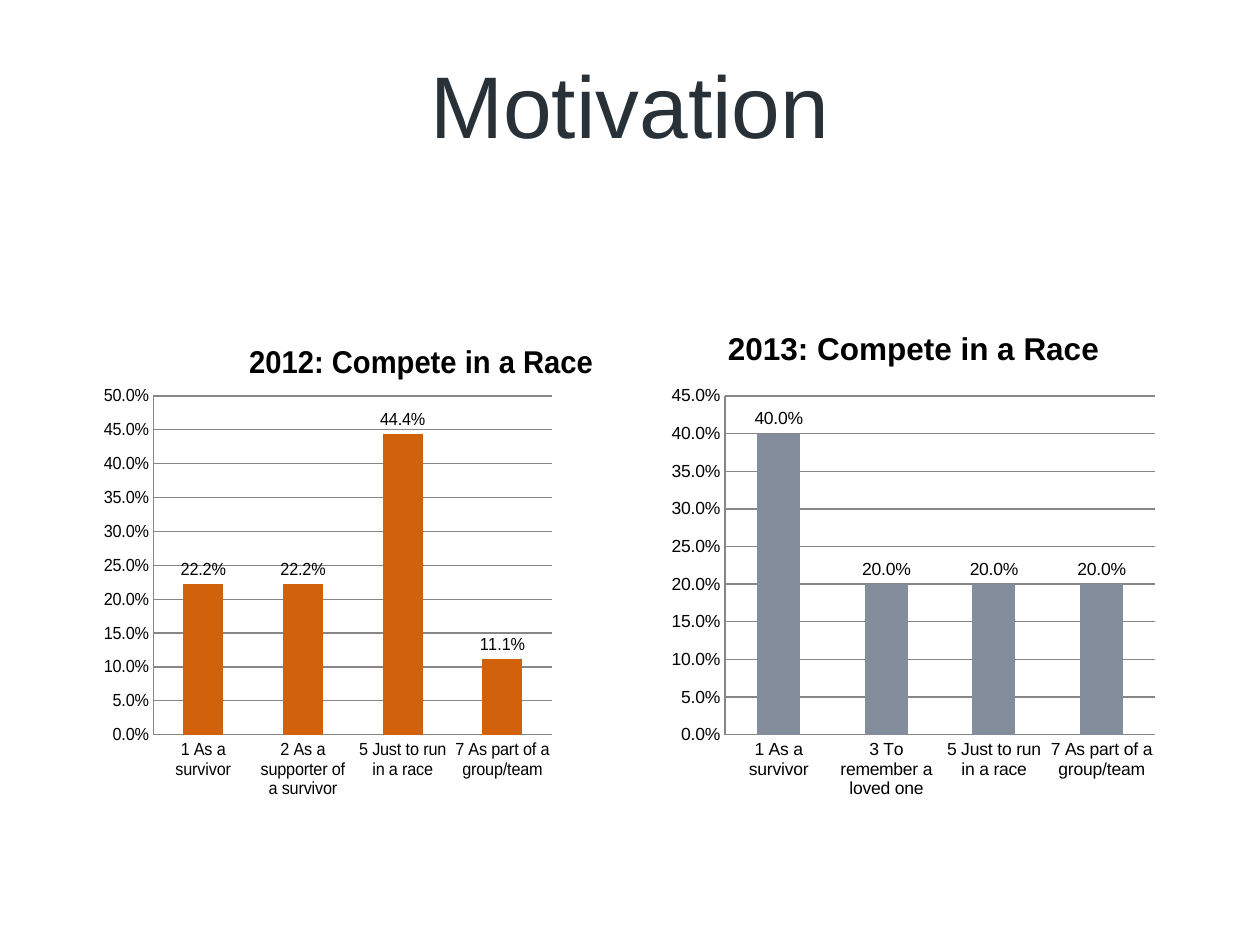
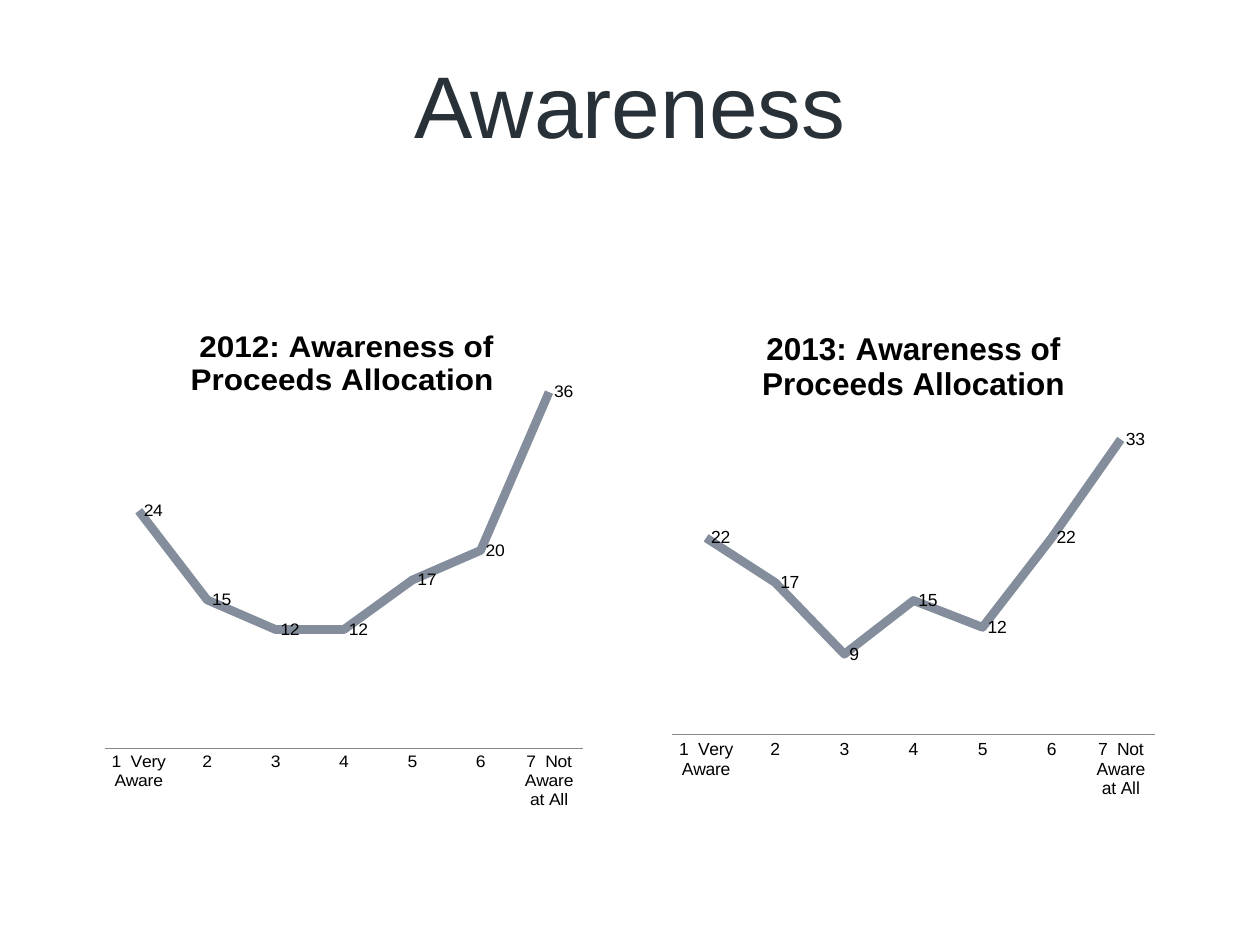
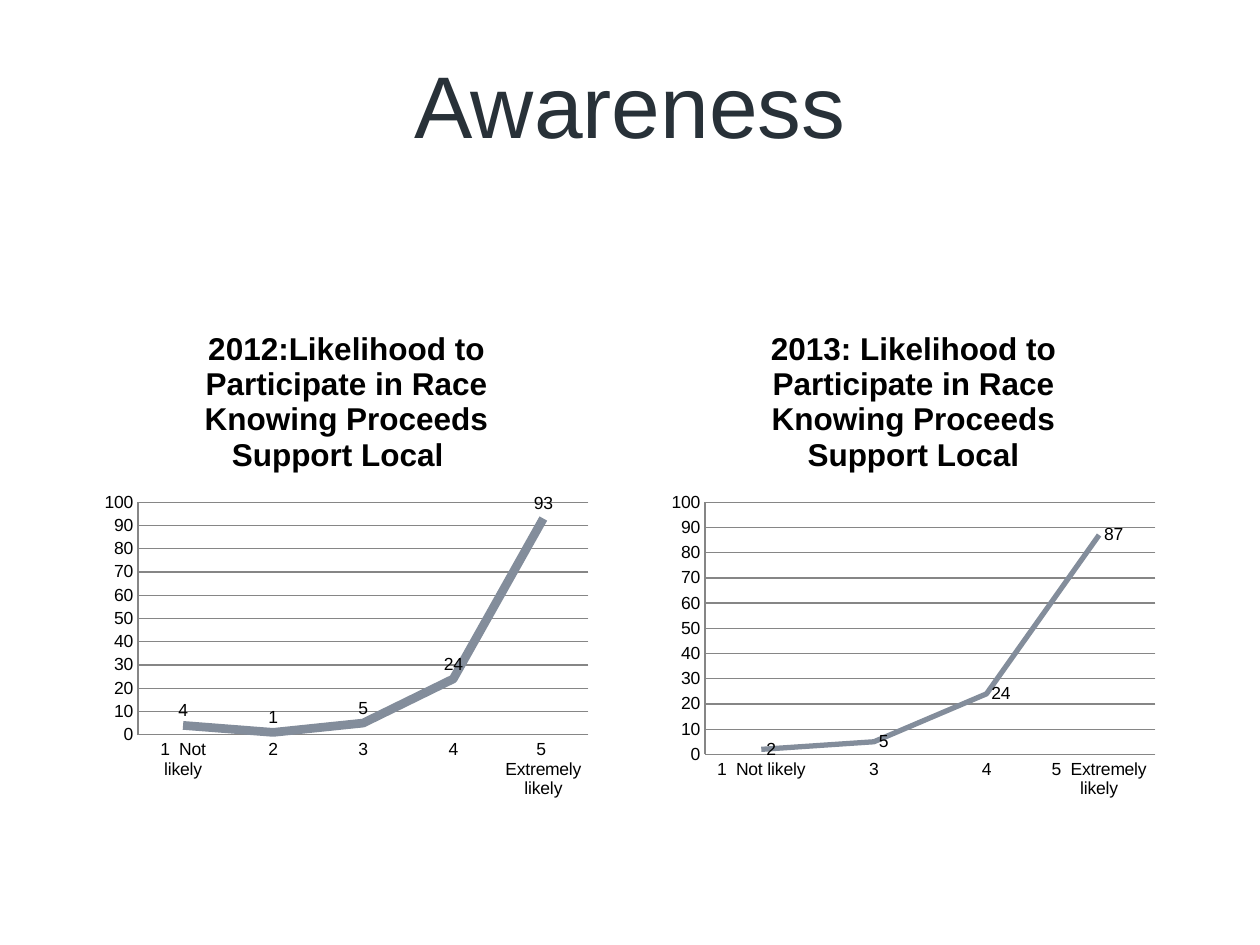
from lxml.etree import SubElement
from pptx import Presentation
from pptx.chart.data import CategoryChartData
from pptx.dml.color import RGBColor
from pptx.enum.chart import XL_CHART_TYPE, XL_LABEL_POSITION, XL_TICK_MARK
from pptx.enum.text import MSO_ANCHOR, PP_ALIGN
from pptx.oxml.ns import qn
from pptx.util import Inches, Pt

COLORS = {"title": "283138", "text": "000000", "grid": "868686",
          "slate": "838D9B", "orange": "D2610C"}
FONT = "Arial"
TITLE_ONLY = 5
CHART_TOP, CHART_SIZE = 2.42, 4
YEAR_LEFT = {2012: 0.75, 2013: 5.25}
PERCENT, WHOLE = "###0.0%", "###0"
AWARENESS_SCALE = ["1  Very Aware", "2", "3", "4", "5", "6",
                   "7  Not Aware at All"]


def color(name):
    return RGBColor.from_string(COLORS[name])


def format_font(font, size, color_name="text", bold=False):
    font.name = FONT
    font.size = Pt(size)
    font.bold = bold
    font.color.rgb = color(color_name)


def write_text(frame, text, *, size, color_name="text", bold=False):
    frame.text = text
    paragraph = frame.paragraphs[0]
    paragraph.alignment = PP_ALIGN.CENTER
    format_font(paragraph.runs[0].font, size, color_name, bold)


def add_titled_slide(deck, heading):
    slide = deck.slides.add_slide(deck.slide_layouts[TITLE_ONLY])
    title = slide.shapes.title
    title.left, title.top = Inches(0.75), Inches(0.07)
    title.width, title.height = Inches(8.5), Inches(1.5)
    title.text_frame.vertical_anchor = MSO_ANCHOR.MIDDLE
    write_text(title.text_frame, heading, size=50, color_name="title")
    return slide


def place_part(element, **settings):
    """Give a chart title or plot area a manual layout."""
    layout = element.find(qn("c:layout"))
    if layout is None:
        layout = element.makeelement(qn("c:layout"))
        element.insert(0, layout)
    manual = SubElement(layout, qn("c:manualLayout"))
    for key, value in settings.items():
        SubElement(manual, qn(f"c:{key}")).set("val", str(value))


def format_axes(chart, number_format, show_values):
    categories, values = chart.category_axis, chart.value_axis
    for axis in (categories, values):
        axis.major_tick_mark = axis.minor_tick_mark = XL_TICK_MARK.NONE
        axis.format.line.color.rgb = color("grid")
        axis.format.line.width = Pt(0.75)
    values.has_major_gridlines = values.visible = show_values
    values.tick_labels.number_format = number_format
    values.tick_labels.number_format_is_linked = False
    if show_values:
        gridline = values.major_gridlines.format.line
        gridline.color.rgb = color("grid")
        gridline.width = Pt(0.75)


def add_year_chart(slide, year, kind, caption, categories, values,
                   number_format, label_position, show_values=True):
    data = CategoryChartData(number_format=number_format)
    data.categories = categories
    data.add_series("Series 1", values)
    chart = slide.shapes.add_chart(
        kind, Inches(YEAR_LEFT[year]), Inches(CHART_TOP),
        Inches(CHART_SIZE), Inches(CHART_SIZE), data).chart
    format_font(chart.font, 10)
    chart.has_legend = False
    chart.has_title = True
    write_text(chart.chart_title.text_frame, caption, size=18, bold=True)
    format_axes(chart, number_format, show_values)

    # Value labels
    plot = chart.plots[0]
    plot.vary_by_categories = False
    plot.has_data_labels = True
    labels = plot.data_labels
    labels.show_value = True
    labels.number_format = number_format
    labels.number_format_is_linked = False
    labels.position = label_position
    format_font(labels.font, 10)
    return chart


def add_column_chart(slide, year, caption, categories, values, fill):
    chart = add_year_chart(slide, year, XL_CHART_TYPE.COLUMN_CLUSTERED,
                           caption, categories, values, PERCENT,
                           XL_LABEL_POSITION.OUTSIDE_END)
    plot = chart.plots[0]
    plot.gap_width = 150
    bars = plot.series[0].format.fill
    bars.solid()
    bars.fore_color.rgb = color(fill)
    return chart


def add_line_chart(slide, year, caption, categories, values, width=5,
                   label_position=XL_LABEL_POSITION.RIGHT, show_values=True):
    chart = add_year_chart(slide, year, XL_CHART_TYPE.LINE, caption,
                           categories, values, WHOLE, label_position,
                           show_values)
    trend = chart.plots[0].series[0]
    trend.smooth = False
    trend.format.line.color.rgb = color("slate")
    trend.format.line.width = Pt(width)
    return chart


def main():
    deck = Presentation()
    deck.slide_width, deck.slide_height = Inches(10), Inches(7.5)

    # Reasons for racing
    motivation = add_titled_slide(deck, "Motivation")
    race_2012 = add_column_chart(
        motivation, 2012, "2012: Compete in a Race",
        ["1 As a survivor", "2 As a supporter of a survivor",
         "5 Just to run in a race", "7 As part of a group/team"],
        [0.222, 0.222, 0.444, 0.111], "orange")
    place_part(race_2012.chart_title._element,
               xMode="edge", yMode="edge", x=0.32, y=0.06)
    add_column_chart(
        motivation, 2013, "2013: Compete in a Race",
        ["1 As a survivor", "3 To remember a loved one",
         "5 Just to run in a race", "7 As part of a group/team"],
        [0.4, 0.2, 0.2, 0.2], "slate")

    # Awareness of where proceeds go
    allocation = add_titled_slide(deck, "Awareness")
    allocation_2012 = add_line_chart(
        allocation, 2012, "2012: Awareness of Proceeds Allocation ",
        AWARENESS_SCALE, [24, 15, 12, 12, 17, 20, 36], show_values=False)
    plot_area = allocation_2012._chartSpace.chart.plotArea
    place_part(plot_area, layoutTarget="inner", xMode="edge", yMode="edge",
               x=0.02, y=0.1, w=0.95, h=0.83)
    add_line_chart(
        allocation, 2013, "2013: Awareness of Proceeds Allocation",
        AWARENESS_SCALE, [22, 17, 9, 15, 12, 22, 33], show_values=False)

    # Likelihood to participate
    likelihood = add_titled_slide(deck, "Awareness")
    question = "Likelihood to Participate in Race Knowing Proceeds Support Local"
    add_line_chart(
        likelihood, 2012, f"2012:{question}  ",
        ["1  Not likely", "2", "3", "4", "5  Extremely likely"],
        [4, 1, 5, 24, 93], label_position=XL_LABEL_POSITION.ABOVE)
    add_line_chart(
        likelihood, 2013, f"2013: {question}",
        ["1  Not likely", "3", "4", "5  Extremely likely"],
        [2, 5, 24, 87], width=3)

    deck.save("out.pptx")


if __name__ == "__main__":
    main()
